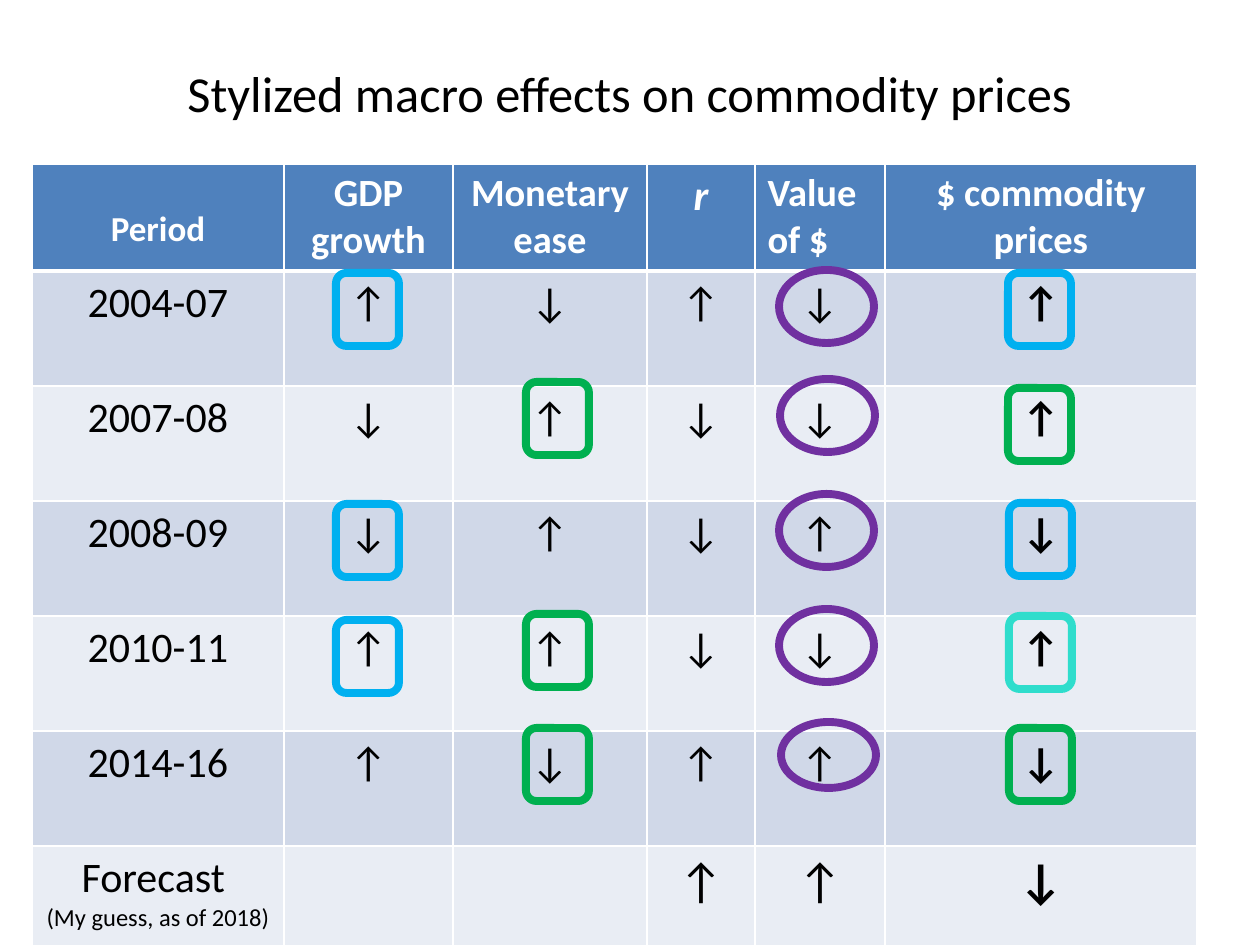
from dataclasses import dataclass
from itertools import product
from lxml.etree import SubElement
from pptx import Presentation
from pptx.dml.color import RGBColor
from pptx.enum.shapes import MSO_SHAPE
from pptx.enum.text import MSO_ANCHOR, PP_ALIGN
from pptx.oxml.ns import qn
from pptx.util import Pt


@dataclass(frozen=True)
class Theme:
    font: str = "Calibri"
    ink: str = "000000"
    white: str = "FFFFFF"
    head: str = "4F81BD"
    bands: tuple = ("D0D8E8", "E9EDF4")
    blue: str = "00B0F0"
    green: str = "00B050"
    teal: str = "2FDDCC"
    purple: str = "7030A0"
    title: float = 28.8
    label: int = 22
    period: int = 20
    rate: int = 24
    body: int = 24
    note: int = 14
    final: int = 28
    ring: float = 4.5


THEME = Theme()
SCALE = 914400 / 126
COLS = (252, 169, 194, 108, 130, 312)
ROWS = (107, 115, 115, 115, 115, 115, 121)
HEADS = ("Period", "GDP growth", "Monetary ease", "r", "Value \nof $", "$ commodity prices")
TRENDS = (
    ("2004-07", "↑↓↑↓↑"),
    ("2007-08", "↓↑↓↓↑"),
    ("2008-09", "↓↑↓↑↓"),
    ("2010-11", "↑↑↓↓↑"),
    ("2014-16", "↑↓↑↑↓"),
)
GUESS = ("", "", "↑", "↑", "↓")


def px(n):
    return round(n * SCALE)


def write(para, text, size, color, bold=False, italic=False, align=PP_ALIGN.CENTER):
    para.alignment = align
    for i, line in enumerate(text.split("\n")):
        if i:
            para.add_line_break()
        run = para.add_run()
        run.text = line
        font = run.font
        font.name, font.size = THEME.font, Pt(size)
        font.bold, font.italic = bold, italic
        font.color.rgb = RGBColor.from_string(color)


def paint(cell, color, base=1):
    props = cell._tc.get_or_add_tcPr()
    for side in "LRTB":
        width = base if side == "B" else 1
        line = SubElement(props, qn(f"a:ln{side}"), w=str(Pt(width)))
        fill = SubElement(line, qn("a:solidFill"))
        SubElement(fill, qn("a:srgbClr"), val=THEME.white)
    cell.fill.solid()
    cell.fill.fore_color.rgb = RGBColor.from_string(color)


def title(slide, x, y, w, h):
    box = slide.shapes.add_textbox(px(x), px(y), px(w), px(h))
    frame = box.text_frame
    frame.word_wrap = True
    frame.vertical_anchor = MSO_ANCHOR.MIDDLE
    write(frame.paragraphs[0], "Stylized macro effects on commodity prices", THEME.title, THEME.ink)


def header(grid):
    sizes = {0: THEME.period, 3: THEME.rate}
    for c, text in enumerate(HEADS):
        cell = grid.cell(0, c)
        paint(cell, THEME.head, 3)
        align = PP_ALIGN.LEFT if c == 4 else PP_ALIGN.CENTER
        size = sizes.get(c, THEME.label)
        write(cell.text_frame.paragraphs[0], text, size, THEME.white, True, c == 3, align)
    grid.cell(0, 0).margin_top = px(44)


def table(slide, x, y, w, h):
    grid = slide.shapes.add_table(len(ROWS), len(COLS), px(x), px(y), px(w), px(h)).table
    for col, wide in zip(grid.columns, COLS):
        col.width = px(wide)
    for row, tall in zip(grid.rows, ROWS):
        row.height = px(tall)
    header(grid)
    lines = [(name, *marks) for name, marks in TRENDS] + [("Forecast ", *GUESS)]
    last = len(lines)
    for r, c in product(range(1, last + 1), range(len(COLS))):
        cell = grid.cell(r, c)
        paint(cell, THEME.bands[(r - 1) % 2])
        text = lines[r - 1][c]
        size = THEME.final if r == last and c else THEME.body
        if text:
            write(cell.text_frame.paragraphs[0], text, size, THEME.ink, c == 5)
    note = grid.cell(last, 0).text_frame.add_paragraph()
    write(note, "(My guess, as of 2018)", THEME.note, THEME.ink)


def ring(slide, kind, x, y, w, h, color):
    shape = slide.shapes.add_shape(kind, px(x), px(y), px(w), px(h))
    shape.shadow.inherit = False
    shape.fill.background()
    shape.line.color.rgb = RGBColor.from_string(color)
    shape.line.width = Pt(THEME.ring)


def rings(slide, x, y):
    t = THEME
    boxes = [(304, top, t.blue) for top in (109, 340, 456)]
    boxes += [(494, top, t.green) for top in (218, 450, 564)]
    boxes += [
        (976, 109, t.blue),
        (976, 224, t.green),
        (977, 339, t.blue),
        (977, 452, t.teal),
        (977, 564, t.green),
    ]
    for left, top, color in boxes:
        ring(slide, MSO_SHAPE.ROUNDED_RECTANGLE, x + left, y + top, 63, 73, color)
    ovals = ((747, 106, 73), (748, 215, 73), (747, 330, 73), (747, 445, 73), (749, 558, 66))
    for left, top, tall in ovals:
        ring(slide, MSO_SHAPE.OVAL, x + left, y + top, 95, tall, t.purple)


def main():
    deck = Presentation()
    deck.slide_width, deck.slide_height = px(1260), px(945)
    slide = deck.slides.add_slide(deck.slide_layouts[6])
    title(slide, 21, 60, 1218, 64)
    table(slide, 32, 164, sum(COLS), sum(ROWS))
    rings(slide, 32, 164)
    deck.save("out.pptx")


if __name__ == "__main__":
    main()
